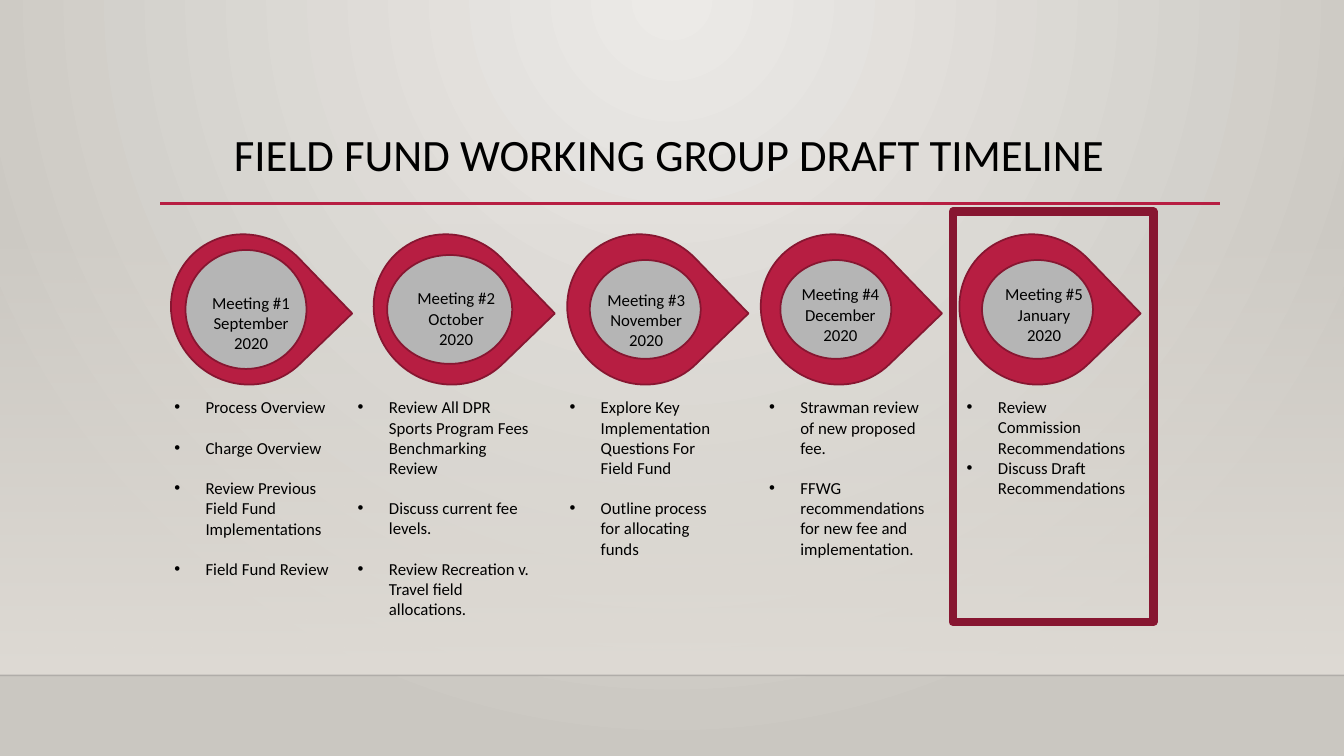
from lxml import etree
from pptx import Presentation
from pptx.dml.color import RGBColor
from pptx.enum.shapes import MSO_CONNECTOR, MSO_SHAPE
from pptx.enum.text import MSO_ANCHOR, MSO_AUTO_SIZE, PP_ALIGN
from pptx.oxml import parse_xml
from pptx.oxml.ns import qn
from pptx.util import Inches, Pt

RECTANGLE, ELLIPSE, TEARDROP = MSO_SHAPE.RECTANGLE, MSO_SHAPE.OVAL, MSO_SHAPE.TEAR
STRAIGHT = MSO_CONNECTOR.STRAIGHT
CENTER, LEFT, TOP = PP_ALIGN.CENTER, PP_ALIGN.LEFT, MSO_ANCHOR.TOP
NO_FIT = MSO_AUTO_SIZE.NONE

# The grid has one column and one row per inch.
COLUMNS, ROWS = 13.33, 7.5
FLOOR_ROW, RULE_ROW, LIST_ROW = 6.7, 2.02, 3.89
DROP_ROW, DROP_WIDTH, DROP_HEIGHT = 2.34, 1.52, 1.46
DISC_MIDDLE, LABEL_HEIGHT = 3.07, 0.71
FONT = "Calibri"
CRIMSON, MAROON, GREY, BLACK = "B71E42", "871631", "B5B5B5", "000000"
NAMESPACE = "http://schemas.openxmlformats.org/drawingml/2006/main"

# Meeting, drop column, disc (column, width, height),
# label (column, row, width), list (column, width, height), gap, items
MEETINGS = [
    ("Meeting #1 September 2020", 1.68, (1.84, 1.2, 1.18), (1.98, 2.85, 1.02),
     (1.63, 1.92, 1.92), 14.5,
     ["Process Overview", "Charge Overview",
      "Review Previous Field Fund Implementations", "Field Fund Review"]),
    ("Meeting #2 October 2020", 3.69, (3.84, 1.24, 1.08), (3.99, 2.81, 1.07),
     (3.45, 1.96, 2.32), 14.5,
     ["Review All DPR Sports Program Fees Benchmarking Review",
      "Discuss current fee levels.",
      "Review Recreation v. Travel field allocations."]),
    ("Meeting #3 November 2020", 5.61, (5.85, 1.1, 0.98), (5.83, 2.82, 1.16),
     (5.55, 1.71, 1.72), 14.5,
     ["Explore Key Implementation Questions For Field Fund",
      "Outline process for allocating funds"]),
    ("Meeting #4 December 2020", 7.53, (7.74, 1.1, 0.98), (7.79, 2.77, 1.09),
     (7.53, 1.82, 2.09), 14.5,
     ["Strawman review of new proposed fee.",
      "FFWG recommendations for new fee and implementation."]),
    ("Meeting #5 January 2020", 9.5, (9.74, 1.1, 0.98), (9.85, 2.77, 1.01),
     (9.49, 1.83, 1.3), 0,
     ["Review Commission Recommendations", "Discuss Draft Recommendations"]),
]


def grid(*lengths):
    return [Inches(length) for length in lengths]


def color(hex_text):
    return RGBColor.from_string(hex_text)


def set_gradient(properties, stops, direction):
    """Swap a solid fill for a gradient of (position, colour, opacity) stops."""
    marks = "".join(
        f'<a:gs pos="{position * 1000}"><a:srgbClr val="{value}">'
        f'<a:alpha val="{opacity * 1000}"/></a:srgbClr></a:gs>'
        for position, value, opacity in stops)
    gradient = parse_xml(f'<a:gradFill xmlns:a="{NAMESPACE}" rotWithShape="1">'
                         f'<a:gsLst>{marks}</a:gsLst>{direction}</a:gradFill>')
    properties.replace(properties.find(qn("a:solidFill")), gradient)


def add_figure(page, kind, box, fill=None, line=None, weight=1.25):
    figure = page.shapes.add_shape(kind, *grid(*box))
    figure.shadow.inherit = False
    if fill:
        figure.fill.solid()
        figure.fill.fore_color.rgb = color(fill)
    else:
        figure.fill.background()
    if line:
        figure.line.color.rgb = color(line)
        figure.line.width = Pt(weight)
    else:
        figure.line.fill.background()
    return figure


def add_rule(page, start, end, row, line, weight):
    rule = page.shapes.add_connector(STRAIGHT, *grid(start, row, end, row))
    rule.line.color.rgb = color(line)
    rule.line.width = Pt(weight)
    etree.SubElement(rule.element.spPr, qn("a:effectLst"))
    return rule


def format_para(para, size, alignment):
    para.alignment = alignment
    for span in para.runs:
        span.font.name = FONT
        span.font.size = Pt(size)
        span.font.color.rgb = color(BLACK)


def add_text(page, box, text, alignment):
    frame = page.shapes.add_textbox(*grid(*box)).text_frame
    frame.word_wrap = True
    frame.text = text
    for para in frame.paragraphs:
        format_para(para, 12, alignment)
    return frame


def add_list(page, box, items, gap):
    frame = add_text(page, box, "\n".join(items), LEFT)
    for index, para in enumerate(frame.paragraphs):
        if index:
            para.space_before = Pt(gap)
        properties = para._p.get_or_add_pPr()
        properties.set("marL", str(Inches(0.31)))
        properties.set("indent", str(Inches(-0.31)))
        etree.SubElement(properties, qn("a:buFont")).set("typeface", "Arial")
        etree.SubElement(properties, qn("a:buChar")).set("char", "•")


def add_backdrop(page):
    page.background.fill.solid()
    set_gradient(page.element.xpath(".//p:bgPr")[0],
                 [(0, "ECEAE7", 100), (100, "CAC7C1", 100)],
                 '<a:path path="circle"><a:fillToRect l="43000" t="0" '
                 'r="43000" b="100000"/></a:path>')
    haze = add_figure(page, RECTANGLE, (0, 2.21, COLUMNS, FLOOR_ROW - 2.21), "DFDBD5")
    set_gradient(haze.element.spPr, [(0, "DFDBD5", 0), (100, "DFDBD5", 100)],
                 '<a:lin ang="5400000" scaled="0"/>')
    edge = add_rule(page, 0, COLUMNS, FLOOR_ROW, "000001", 1)
    tint = edge.element.spPr.find(".//" + qn("a:srgbClr"))
    etree.SubElement(tint, qn("a:alpha")).set("val", "20000")
    add_rule(page, 1.59, 12.1, RULE_ROW, CRIMSON, 2.5)


def add_title(page, text):
    title = page.shapes.title
    title.left, title.top, title.width, title.height = grid(1.39, 1.27, 10.5, 1.15)
    frame = title.text_frame
    frame.text = text
    frame.word_wrap = True
    frame.auto_size = NO_FIT
    frame.vertical_anchor = TOP
    para = frame.paragraphs[0]
    para.line_spacing = 0.9
    format_para(para, 32, CENTER)


def add_meeting(page, name, drop_column, disc, label, notes, gap, items):
    drop = add_figure(page, TEARDROP, (drop_column, DROP_ROW, DROP_WIDTH, DROP_HEIGHT),
                      CRIMSON, MAROON)
    drop.rotation = 46
    column, width, height = disc
    add_figure(page, ELLIPSE, (column, DISC_MIDDLE - height / 2, width, height),
               GREY, MAROON)
    add_text(page, (*label, LABEL_HEIGHT), name, CENTER)
    column, width, height = notes
    add_list(page, (column, LIST_ROW, width, height), items, gap)


def main():
    deck = Presentation()
    deck.slide_width, deck.slide_height = grid(COLUMNS, ROWS)
    page = deck.slides.add_slide(deck.slide_layouts[5])
    add_backdrop(page)
    add_title(page, "FIELD FUND WORKING GROUP DRAFT TIMELINE")
    for meeting in MEETINGS:
        add_meeting(page, *meeting)
    add_figure(page, RECTANGLE, (9.45, 2.1, 1.99, 4.07), line=MAROON, weight=6)
    deck.save("out.pptx")


if __name__ == "__main__":
    main()
